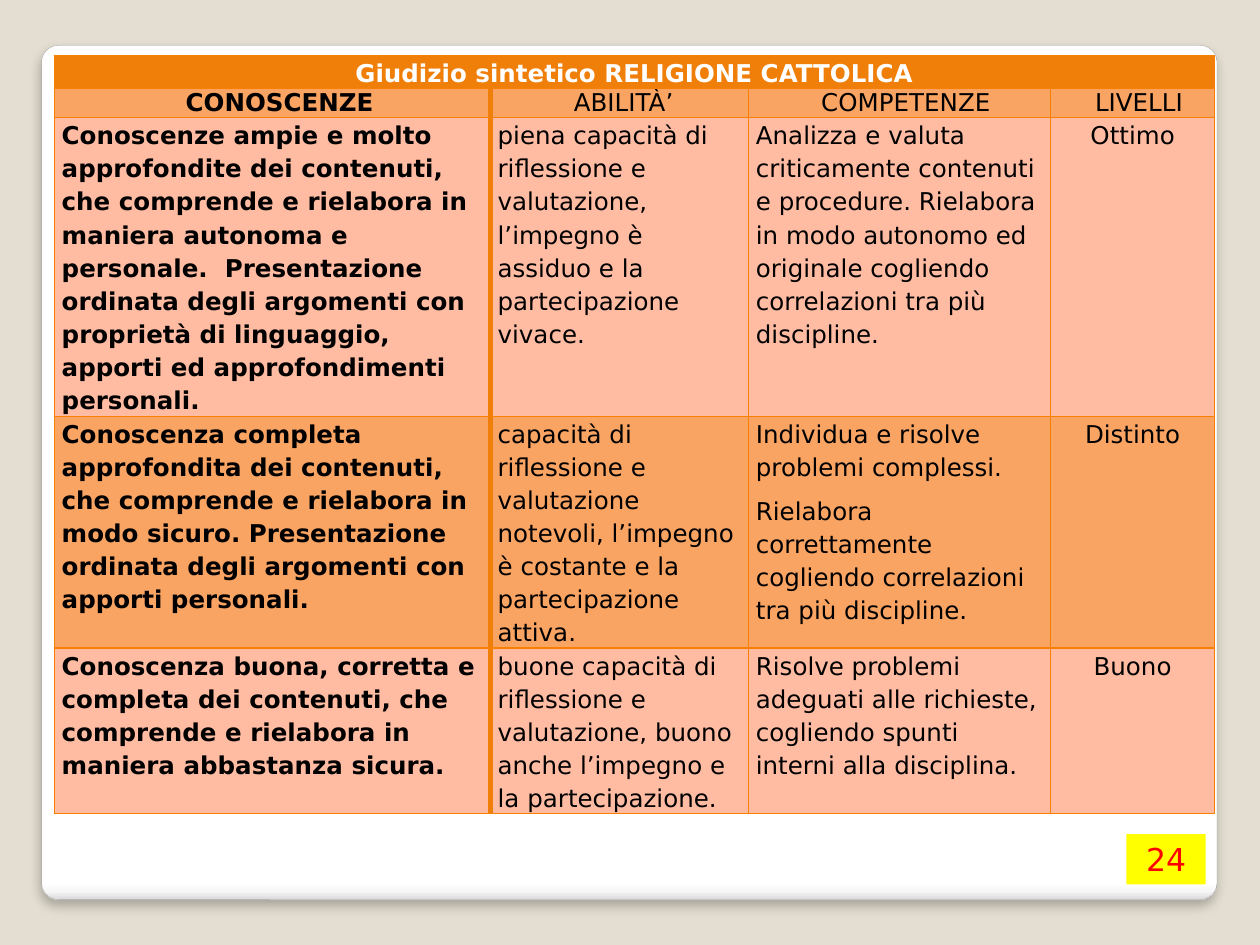
from lxml.etree import SubElement
from pptx import Presentation
from pptx.dml.color import RGBColor
from pptx.enum.shapes import MSO_SHAPE
from pptx.enum.text import MSO_ANCHOR, PP_ALIGN
from pptx.oxml import parse_xml
from pptx.oxml.ns import nsdecls, qn
from pptx.util import Inches, Pt

ORANGE, RULE, BAND, PALE = "F07F09", "F97F00", "FAA464", "FFBCA3"
BLACK, WHITE = "000000", "FFFFFF"


def rgb(value):
    return RGBColor.from_string(value)


class Deck:
    font_name = "DejaVu Sans"
    body_size = 14

    def __init__(self, width, height, background):
        self.presentation = Presentation()
        self.presentation.slide_width = Inches(width)
        self.presentation.slide_height = Inches(height)
        self.slide = self.presentation.slides.add_slide(self.presentation.slide_layouts[6])
        self.slide.background.fill.solid()
        self.slide.background.fill.fore_color.rgb = rgb(background)

    def style(self, paragraph, size, color, bold=False, align=PP_ALIGN.LEFT):
        paragraph.alignment = align
        font = paragraph.font
        font.name, font.size, font.bold = self.font_name, Pt(size), bold
        font.color.rgb = rgb(color)

    def panel(self, left, top, width, height):
        panel = self.slide.shapes.add_shape(
            MSO_SHAPE.ROUNDED_RECTANGLE, *map(Inches, (left, top, width, height)))
        panel.adjustments[0] = 0.02
        panel.line.color.rgb = rgb("A4A4A4")
        panel.line.width = Pt(0.16)
        panel.fill.gradient()
        panel.fill.gradient_angle = 270
        properties = panel.element.spPr
        stops = properties.find(".//" + qn("a:gsLst"))
        for stop in list(stops):
            stops.remove(stop)
        for percent, color in ((0, WHITE), (98, WHITE), (99, "F7F7F7"), (100, "DADADA")):
            stop = SubElement(stops, qn("a:gs"), pos=str(percent * 1000))
            SubElement(stop, qn("a:srgbClr"), val=color)
        properties.append(parse_xml(
            f'<a:effectLst {nsdecls("a")}><a:outerShdw blurRad="{Pt(6)}" dist="{Pt(4)}" '
            f'dir="5400000" rotWithShape="0"><a:srgbClr val="{BLACK}"><a:alpha val="25000"/>'
            '</a:srgbClr></a:outerShdw></a:effectLst>'))

    def table(self, left, top, columns, rows):
        table = self.slide.shapes.add_table(
            len(rows), len(columns), Inches(left), Inches(top),
            Inches(sum(columns)), Inches(sum(rows))).table
        table.horz_banding = False
        for column, width in zip(table.columns, columns):
            column.width = Inches(width)
        for row, height in zip(table.rows, rows):
            row.height = Inches(height)
        return table

    def cell(self, cell, texts, fill, color=BLACK, bold=False, align=PP_ALIGN.LEFT,
             spacing=1.15, after=6, indent=0, thick=None):
        cell.margin_left = cell.margin_right = Inches(0.06)
        cell.margin_top = cell.margin_bottom = 0
        cell.fill.solid()
        cell.fill.fore_color.rgb = rgb(fill)
        cell.text = "\n".join(texts)
        for paragraph in cell.text_frame.paragraphs:
            self.style(paragraph, self.body_size, color, bold, align)
            paragraph.line_spacing = spacing
            paragraph.space_after = Pt(after)
            if indent:
                paragraph._p.get_or_add_pPr().set("marL", str(Inches(indent)))
        self.borders(cell, thick)

    def borders(self, cell, thick):
        properties = cell._tc.get_or_add_tcPr()
        for position, side in enumerate("LRTB"):
            color, width = (ORANGE, 3.35) if side == thick else (RULE, 0.75)
            properties.insert(position, parse_xml(
                f'<a:ln{side} {nsdecls("a")} w="{Pt(width)}"><a:solidFill>'
                f'<a:srgbClr val="{color}"/></a:solidFill></a:ln{side}>'))

    def badge(self, text, left, top, width, height):
        badge = self.slide.shapes.add_shape(
            MSO_SHAPE.RECTANGLE, *map(Inches, (left, top, width, height)))
        badge.shadow.inherit = False
        badge.fill.solid()
        badge.fill.fore_color.rgb = rgb("FFFF00")
        badge.line.fill.background()
        badge.text_frame.text = text
        badge.text_frame.vertical_anchor = MSO_ANCHOR.TOP
        self.style(badge.text_frame.paragraphs[0], 18, "FF0000", align=PP_ALIGN.CENTER)


HEADINGS = [("CONOSCENZE", 0.12), ("ABILITÀ’", 0.07), ("COMPETENZE", 0.1), ("LIVELLI", 0.1)]

# Each level: knowledge, abilities, competences, grade
LEVELS = [
    (["Conoscenze ampie e molto approfondite dei contenuti, che comprende e rielabora in "
      "maniera autonoma e personale.  Presentazione ordinata degli argomenti con proprietà "
      "di linguaggio, apporti ed approfondimenti personali."],
     ["piena capacità di riflessione e valutazione, l’impegno è assiduo e la "
      "partecipazione vivace."],
     ["Analizza e valuta criticamente contenuti e procedure. Rielabora in modo autonomo "
      "ed originale cogliendo correlazioni tra più discipline."],
     ["Ottimo"]),
    (["Conoscenza completa approfondita dei contenuti, che comprende e rielabora in modo "
      "sicuro. Presentazione ordinata degli argomenti con apporti personali."],
     ["capacità di riflessione e valutazione notevoli, l’impegno è costante e la "
      "partecipazione attiva."],
     ["Individua e risolve problemi complessi.",
      "Rielabora correttamente cogliendo correlazioni tra più discipline."],
     ["Distinto"]),
    (["Conoscenza buona, corretta e completa dei contenuti, che comprende e rielabora in "
      "maniera abbastanza sicura."],
     ["buone capacità di riflessione e valutazione, buono anche l’impegno e la "
      "partecipazione."],
     ["Risolve problemi adeguati alle richieste, cogliendo spunti interni alla disciplina."],
     ["Buono"]),
]


def main():
    deck = Deck(10, 7.5, "E3DED1")
    deck.panel(0.33, 0.36, 9.33, 6.78)

    # Assessment grid with a title row across all columns
    grid = deck.table(0.43, 0.44, [3.46, 2.05, 2.4, 1.3], [0.26, 0.23, 2.37, 1.84, 1.31])
    grid.cell(0, 0).merge(grid.cell(0, 3))
    deck.cell(grid.cell(0, 0), ["Giudizio sintetico RELIGIONE CATTOLICA"], ORANGE,
              WHITE, bold=True, align=PP_ALIGN.CENTER)

    # The thick rule sits between the first two columns
    thick_sides = ["R", "L", None, None]
    for column, (heading, indent) in enumerate(HEADINGS):
        deck.cell(grid.cell(1, column), [heading], BAND, bold=column == 0,
                  align=PP_ALIGN.CENTER, spacing=1.0, indent=indent,
                  thick=thick_sides[column])

    # Levels on alternating bands
    for row, level in enumerate(LEVELS, start=2):
        for column, texts in enumerate(level):
            deck.cell(grid.cell(row, column), texts, BAND if row % 2 else PALE,
                      bold=column == 0, after=0 if column == 1 else 6,
                      align=PP_ALIGN.CENTER if column == 3 else PP_ALIGN.LEFT,
                      thick=thick_sides[column])

    # Page number
    deck.badge("24", 8.94, 6.62, 0.63, 0.4)
    deck.presentation.save("out.pptx")


if __name__ == "__main__":
    main()
